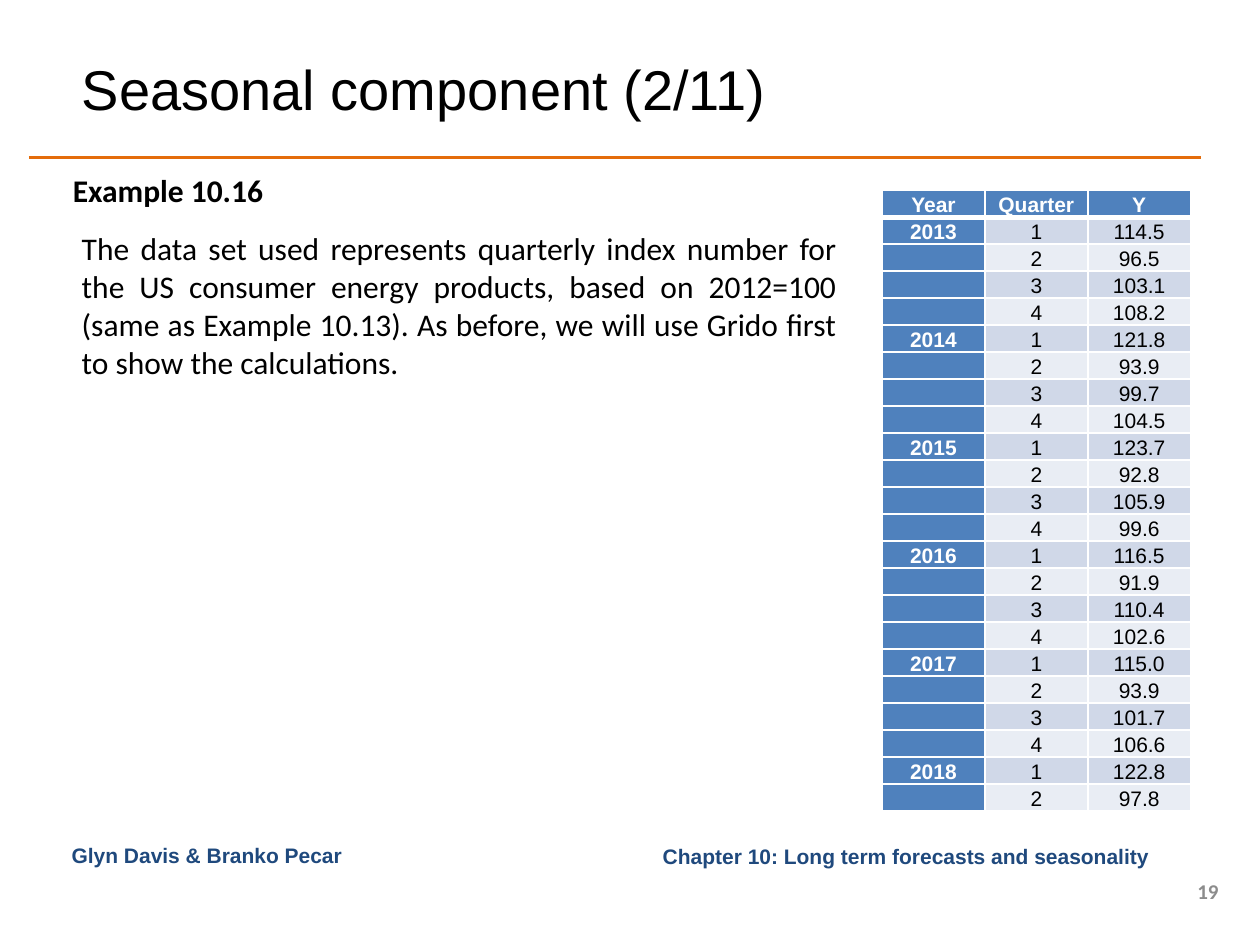
"""Build the seasonal component slide with its quarterly index table."""
from lxml import etree
from pptx import Presentation
from pptx.dml.color import RGBColor
from pptx.enum.shapes import MSO_CONNECTOR
from pptx.enum.text import MSO_ANCHOR, PP_ALIGN
from pptx.oxml.ns import qn
from pptx.util import Inches, Pt

STRAIGHT = MSO_CONNECTOR.STRAIGHT
TOP, MIDDLE, BOTTOM = MSO_ANCHOR.TOP, MSO_ANCHOR.MIDDLE, MSO_ANCHOR.BOTTOM
LEFT, CENTER, RIGHT, JUSTIFY = PP_ALIGN.LEFT, PP_ALIGN.CENTER, PP_ALIGN.RIGHT, PP_ALIGN.JUSTIFY

BLACK = RGBColor(0x00, 0x00, 0x00)
WHITE = RGBColor(0xFF, 0xFF, 0xFF)
ORANGE = RGBColor(0xE4, 0x6C, 0x0A)
NAVY = RGBColor(0x1F, 0x49, 0x7D)
GREY = RGBColor(0x8C, 0x8C, 0x8C)
BLUE = RGBColor(0x4F, 0x81, 0xBD)
BANDS = [RGBColor(0xE9, 0xED, 0xF4), RGBColor(0xD0, 0xD8, 0xE8)]

prs = Presentation()
prs.slide_width, prs.slide_height = Inches(10), Inches(7.5)
COL, ROW = prs.slide_width / 100, prs.slide_height / 75


def box(left, top, width, height):
    return [round(n * unit) for n, unit in zip((left, top, width, height), (COL, ROW, COL, ROW))]


def write(frame, text, align, name, size, color, bold=False):
    paragraph = frame.paragraphs[0]
    paragraph.alignment = align
    run = paragraph.add_run()
    run.text = text
    look = {"name": name, "size": Pt(size), "bold": bold}
    for key, value in look.items():
        setattr(run.font, key, value)
    run.font.color.rgb = color
    return paragraph


slide = prs.slides.add_slide(prs.slide_layouts[5])

heading = slide.shapes.title
heading.left, heading.top, heading.width, heading.height = box(5.5, 3.1, 75.8, 7.8)
heading.text_frame.vertical_anchor = MIDDLE
write(heading.text_frame, "Seasonal component (2/11)", LEFT, "Arial", 32, BLACK)

divider = slide.shapes.add_connector(
    STRAIGHT, round(2.3 * COL), round(12.5 * ROW), round(95.3 * COL), round(12.5 * ROW))
divider.line.color.rgb = ORANGE
divider.line.width = Pt(2)
etree.SubElement(divider._element.spPr, qn("a:effectLst"))

passages = [
    ((50, 66.4, 42.2, 3.1), MIDDLE, True,
     ("Chapter 10: Long term forecasts and seasonality", RIGHT, "Arial", 12, NAVY, True)),
    ((93, 69.5, 4.7, 2.4), MIDDLE, True, ("19", RIGHT, "Calibri", 12, GREY, True)),
    ((4.7, 66.4, 29.7, 3.1), TOP, True,
     ("Glyn Davis & Branko Pecar", LEFT, "Arial", 12, NAVY, True)),
    ((4.8, 13.1, 17.2, 4), TOP, False, ("Example 10.16", JUSTIFY, "Calibri", 18, BLACK, True)),
    ((5.5, 17.7, 61.9, 13.1), TOP, True,
     ("The data set used represents quarterly index number for the US consumer energy "
      "products, based on 2012=100 (same as Example 10.13). As before, we will use Grido "
      "first to show the calculations.", JUSTIFY, "Calibri", 18, BLACK)),
]
for place, anchor, wrap, wording in passages:
    frame = slide.shapes.add_textbox(*box(*place)).text_frame
    frame.word_wrap = wrap
    frame.vertical_anchor = anchor
    write(frame, *wording)

index_by_year = {
    "2013": ["114.5", "96.5", "103.1", "108.2"],
    "2014": ["121.8", "93.9", "99.7", "104.5"],
    "2015": ["123.7", "92.8", "105.9", "99.6"],
    "2016": ["116.5", "91.9", "110.4", "102.6"],
    "2017": ["115.0", "93.9", "101.7", "106.6"],
    "2018": ["122.8", "97.8"],
}
records = [("Year", "Quarter", "Y")]
for year, values in index_by_year.items():
    for quarter, value in enumerate(values, 1):
        records.append((year if quarter == 1 else "", str(quarter), value))

index_table = slide.shapes.add_table(len(records), 3, *box(70, 15.1, 24.5, 47.6)).table
cell_format = {"margin_left": Inches(0.07), "margin_right": Inches(0.07),
               "margin_top": 0, "margin_bottom": 0, "vertical_anchor": BOTTOM}
for r, record in enumerate(records):
    for c, entry in enumerate(record):
        cell = index_table.cell(r, c)
        for key, value in cell_format.items():
            setattr(cell, key, value)
        is_label = r == 0 or c == 0
        if entry:
            paragraph = write(cell.text_frame, entry, CENTER, "Arial", 12,
                              WHITE if is_label else BLACK, is_label)
            paragraph.line_spacing = 1.07
        else:
            etree.SubElement(cell.text_frame.paragraphs[0]._p, qn("a:endParaRPr"), sz="1200")
        edges = {"a:lnL": 1, "a:lnR": 1, "a:lnT": 3 if r == 1 else 1, "a:lnB": 3 if r == 0 else 1}
        for tag, points in edges.items():
            edge = etree.SubElement(cell._tc.get_or_add_tcPr(), qn(tag), w=str(Pt(points)))
            paint = etree.SubElement(edge, qn("a:solidFill"))
            etree.SubElement(paint, qn("a:srgbClr"), val=str(WHITE))
        cell.fill.solid()
        cell.fill.fore_color.rgb = BLUE if is_label else BANDS[r % 2]

prs.save("out.pptx")
